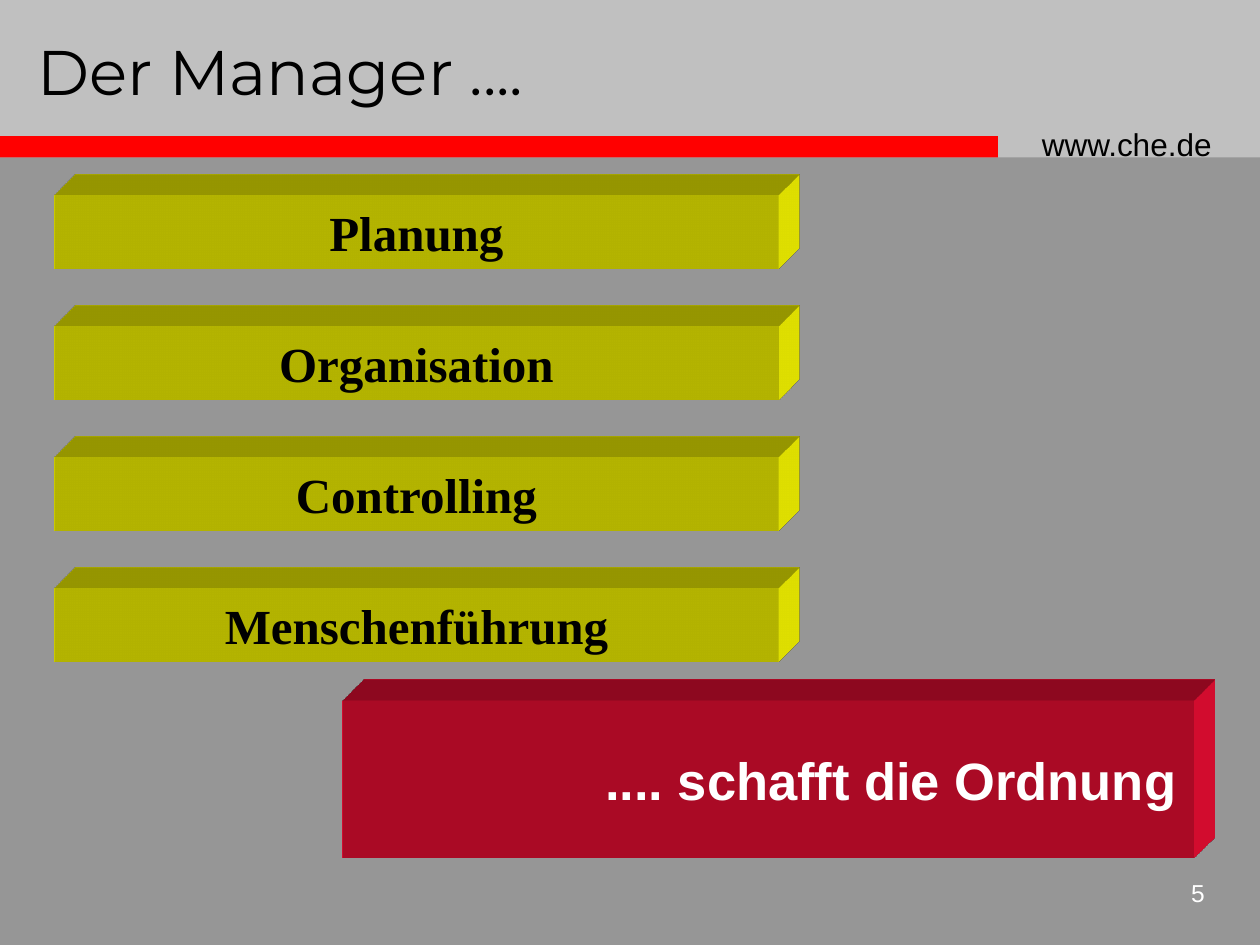
from lxml.etree import fromstring
from pptx import Presentation
from pptx.dml.color import RGBColor
from pptx.enum.shapes import MSO_SHAPE
from pptx.enum.text import MSO_ANCHOR, MSO_AUTO_SIZE, PP_ALIGN
from pptx.util import Inches, Pt

BLACK = RGBColor(0, 0, 0)
WHITE = RGBColor(255, 255, 255)
GREY = RGBColor(0x96, 0x96, 0x96)
SILVER = RGBColor(0xC0, 0xC0, 0xC0)
RED = RGBColor(255, 0, 0)
CRIMSON = RGBColor(0xF0, 0x0E, 0x34)
YELLOW = RGBColor(255, 255, 0)

A = 'xmlns:a="http://schemas.openxmlformats.org/drawingml/2006/main"'
SCENE = f'''<a:scene3d {A}><a:camera prst="legacyObliqueTopRight"/>
<a:lightRig rig="legacyFlat3" dir="b"/></a:scene3d>'''
DEPTH = f'''<a:sp3d {A} extrusionH="430200" prstMaterial="legacyMatte">
<a:bevelT w="13500" h="13500" prst="angle"/><a:bevelB w="13500" h="13500" prst="angle"/>
<a:extrusionClr><a:srgbClr val="%s"/></a:extrusionClr></a:sp3d>'''


def add_box(x, y, w, h, color, extruded=False):
    sp = s.shapes.add_shape(MSO_SHAPE.RECTANGLE, Inches(x), Inches(y), Inches(w), Inches(h))
    sp.shadow.inherit = False
    sp.fill.solid()
    sp.fill.fore_color.rgb = color
    sp.line.fill.background()
    if extruded:
        sp._element.spPr.append(fromstring(SCENE))
        sp._element.spPr.append(fromstring(DEPTH % str(color)))
    return sp


def set_text(sp, text, font, size, color, align, bold=False, wrap=False):
    tf = sp.text_frame
    tf.text = text
    tf.word_wrap = wrap
    p = tf.paragraphs[0]
    p.alignment = align
    f = p.runs[0].font
    f.name, f.size, f.bold = font, Pt(size), bold
    f.color.rgb = color


prs = Presentation()
prs.slide_width, prs.slide_height = Inches(10), Inches(7.5)
s = prs.slides.add_slide(prs.slide_layouts[5])
s.background.fill.solid()
s.background.fill.fore_color.rgb = GREY

# Header band, red rule and web address
add_box(0, 0, 10, 1.25, SILVER)
add_box(-0.01, 1.08, 7.93, 0.17, RED)
address = s.shapes.add_textbox(Inches(8.17), Inches(0.94), Inches(1.75), Inches(0.4))
set_text(address, "www.che.de", "Arial", 18, BLACK, PP_ALIGN.LEFT, wrap=True)

# Title, raised above the header band
title = s.shapes.title
title.left, title.top, title.width, title.height = Inches(0.2), Inches(0.21), Inches(4.51), Inches(0.7)
set_text(title, "Der Manager ....", "Montserrat", 36, BLACK, PP_ALIGN.LEFT)
title.text_frame.auto_size = MSO_AUTO_SIZE.NONE
title.text_frame.vertical_anchor = MSO_ANCHOR.TOP
title._element.getparent().append(title._element)

# Conclusion
conclusion = add_box(2.72, 5.56, 6.75, 1.25, CRIMSON, extruded=True)
set_text(conclusion, ".... schafft die Ordnung", "Arial", 30, WHITE, PP_ALIGN.RIGHT, bold=True, wrap=True)
conclusion.text_frame.margin_right = Inches(0.13)

# Management tasks
for i, task in enumerate(["Planung", "Organisation", "Controlling", "Menschenführung"]):
    bar = add_box(0.43, 1.55 + 1.04 * i, 5.75, 0.58, YELLOW, extruded=True)
    set_text(bar, task, "Times New Roman", 28, BLACK, PP_ALIGN.CENTER, bold=True)

number = s.shapes.add_textbox(Inches(9.08), Inches(6.92), Inches(0.58), Inches(0.42))
set_text(number, "5", "Arial", 14, WHITE, PP_ALIGN.RIGHT, wrap=True)

prs.save("out.pptx")
